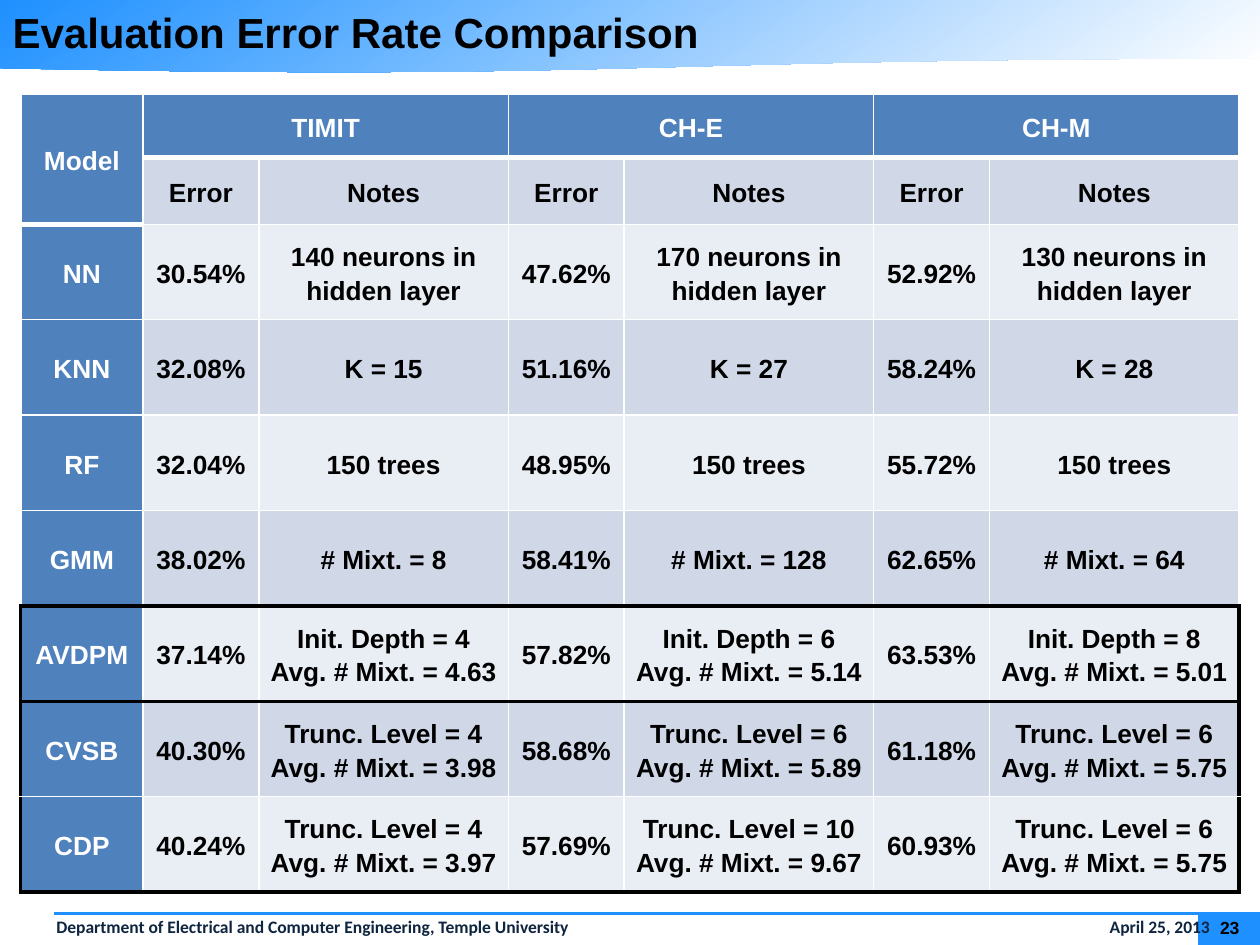
from lxml import etree
from pptx import Presentation
from pptx.dml.color import RGBColor
from pptx.enum.shapes import MSO_CONNECTOR, MSO_SHAPE
from pptx.enum.text import MSO_ANCHOR, PP_ALIGN
from pptx.oxml.ns import qn
from pptx.util import Inches, Pt

LEFT, CENTER, RIGHT = PP_ALIGN.LEFT, PP_ALIGN.CENTER, PP_ALIGN.RIGHT
TOP, MIDDLE = MSO_ANCHOR.TOP, MSO_ANCHOR.MIDDLE
TITLE_ONLY = 5

COLORS = {
    "black": "000000", "white": "FFFFFF", "accent": "1E90FF", "footer": "0F243E",
    "header": "4F81BD", "dark_band": "D0D8E8", "light_band": "E9EDF4",
}
TITLE = "Evaluation Error Rate Comparison"
DEPARTMENT = "Department of Electrical and Computer Engineering, Temple University"
DATE = "April 25, 2013"
SLIDE_NUMBER = "23"
CORPORA = ["TIMIT", "CH-E", "CH-M"]
ROWS = [
    ["Model", "TIMIT", "", "CH-E", "", "CH-M", ""],
    [""] + ["Error", "Notes"] * len(CORPORA),
    ["NN", "30.54%", "140 neurons in hidden layer", "47.62%", "170 neurons in hidden layer",
     "52.92%", "130 neurons in hidden layer"],
    ["KNN", "32.08%", "K = 15", "51.16%", "K = 27", "58.24%", "K = 28"],
    ["RF", "32.04%", "150 trees", "48.95%", "150 trees", "55.72%", "150 trees"],
    ["GMM", "38.02%", "# Mixt. = 8", "58.41%", "# Mixt. = 128", "62.65%", "# Mixt. = 64"],
    ["AVDPM", "37.14%", "Init. Depth = 4\vAvg. # Mixt. = 4.63",
     "57.82%", "Init. Depth = 6\nAvg. # Mixt. = 5.14",
     "63.53%", "Init. Depth = 8\nAvg. # Mixt. = 5.01"],
    ["CVSB", "40.30%", "Trunc. Level = 4\vAvg. # Mixt. = 3.98",
     "58.68%", "Trunc. Level = 6\nAvg. # Mixt. = 5.89",
     "61.18%", "Trunc. Level = 6\nAvg. # Mixt. = 5.75"],
    ["CDP", "40.24%", "Trunc. Level = 4\vAvg. # Mixt. = 3.97",
     "57.69%", "Trunc. Level = 10\nAvg. # Mixt. = 9.67",
     "60.93%", "Trunc. Level = 6\nAvg. # Mixt. = 5.75"],
]
TABLE_HEIGHT = 6.33
HEADING_HEIGHTS = [0.5, 0.53]
MODEL_COUNT = len(ROWS) - len(HEADING_HEIGHTS)
MODEL_HEIGHT = (TABLE_HEIGHT - sum(HEADING_HEIGHTS)) / MODEL_COUNT
ROW_HEIGHTS = HEADING_HEIGHTS + [MODEL_HEIGHT] * MODEL_COUNT
COLUMN_WIDTHS = [0.97] + [0.92, 1.98] * len(CORPORA)
FIRST_BOXED_ROW = 6
LAST_ROW, LAST_COLUMN = len(ROWS) - 1, len(COLUMN_WIDTHS) - 1


def rgb(name):
    return RGBColor.from_string(COLORS[name])


def style_text(text_frame, size, color, font="Arial", align=LEFT, spacing=None):
    for paragraph in text_frame.paragraphs:
        paragraph.alignment = align
        paragraph.line_spacing = spacing
        for run in paragraph.runs:
            run.font.size = Pt(size)
            run.font.name = font
            run.font.bold = True
            run.font.color.rgb = rgb(color)


def add_block(slide, preset, box):
    shape = slide.shapes.add_shape(preset, *map(Inches, box))
    shape.shadow.inherit = False
    shape.line.fill.background()
    return shape


def set_margins(target, horizontal, vertical):
    target.margin_left = target.margin_right = Inches(horizontal)
    target.margin_top = target.margin_bottom = Inches(vertical)


def add_text(slide, box, text, margins):
    text_frame = slide.shapes.add_textbox(*map(Inches, box)).text_frame
    text_frame.word_wrap = True
    set_margins(text_frame, *margins)
    text_frame.text = text
    return text_frame


def add_banner(slide):
    banner = add_block(slide, MSO_SHAPE.FLOWCHART_DOCUMENT, (0, 0, 10.01, 0.58))
    banner.fill.gradient()
    banner.fill.gradient_angle = 305
    for stop, color in zip(banner.fill.gradient_stops, ("accent", "white")):
        stop.color.rgb = rgb(color)
    slide.shapes.title._element.addprevious(banner._element)


def add_footer(slide):
    number_block = add_block(slide, MSO_SHAPE.RECTANGLE, (9.51, 7.24, 0.5, 0.26))
    number_block.fill.solid()
    number_block.fill.fore_color.rgb = rgb("accent")

    for left, width, text, align in ((0.35, 6, DEPARTMENT, LEFT), (7.7, 2, DATE, RIGHT)):
        footer = add_text(slide, (left, 7.23, width, 0.26), text, (0.1, 0.05))
        style_text(footer, 10, "footer", "Calibri", align, 0.95)

    rule = slide.shapes.add_connector(
        MSO_CONNECTOR.STRAIGHT, Inches(0.43), Inches(7.25), Inches(10), Inches(7.25))
    rule.line.color.rgb = rgb("accent")
    rule.line.width = Pt(1.5)
    etree.SubElement(rule._element.spPr, qn("a:effectLst"))

    number = add_text(slide, (9.56, 7.28, 0.4, 0.17), SLIDE_NUMBER, (0, 0))
    number.vertical_anchor = MIDDLE
    style_text(number, 10, "black", align=CENTER)


def add_title(slide):
    title = slide.shapes.title
    title.left, title.top, title.width, title.height = map(Inches, (0, 0, 10, 0.43))
    title.text_frame.text = TITLE
    title.text_frame.vertical_anchor = TOP
    style_text(title.text_frame, 24, "black")


def cell_borders(row, column):
    thin, thick, box = ("white", 1), ("white", 3), ("black", 2.25)
    boxed = row >= FIRST_BOXED_ROW
    heading_bottom = row == 0 or (row == 1 and column == 0)
    return {
        "a:lnL": box if boxed and column == 0 else thin,
        "a:lnR": box if boxed and column == LAST_COLUMN else thin,
        "a:lnT": box if row in (FIRST_BOXED_ROW, FIRST_BOXED_ROW + 1) else thin,
        "a:lnB": box if row in (FIRST_BOXED_ROW - 1, FIRST_BOXED_ROW, LAST_ROW)
        else thick if heading_bottom else thin,
    }


def draw_borders(cell, borders):
    properties = cell._tc.get_or_add_tcPr()
    for position, (tag, (color, width)) in enumerate(borders.items()):
        line = etree.Element(qn(tag), w=str(Pt(width)))
        fill = etree.SubElement(line, qn("a:solidFill"))
        etree.SubElement(fill, qn("a:srgbClr"), val=COLORS[color])
        properties.insert(position, line)


def add_results_table(slide):
    table = slide.shapes.add_table(
        len(ROWS), len(COLUMN_WIDTHS), Inches(0.165), Inches(0.75),
        Inches(sum(COLUMN_WIDTHS)), Inches(TABLE_HEIGHT)).table
    for column, width in zip(table.columns, COLUMN_WIDTHS):
        column.width = Inches(width)
    for row, height in zip(table.rows, ROW_HEIGHTS):
        row.height = Inches(height)
    for row, texts in enumerate(ROWS):
        band = "dark_band" if row % 2 else "light_band"
        for column, text in enumerate(texts):
            cell = table.cell(row, column)
            heading = row == 0 or column == 0
            cell.fill.solid()
            cell.fill.fore_color.rgb = rgb("header" if heading else band)
            cell.vertical_anchor = MIDDLE
            set_margins(cell, 0.07, 0)
            cell.text_frame.text = text
            style_text(cell.text_frame, 15, "white" if heading else "black",
                       align=CENTER, spacing=1.15)
            draw_borders(cell, cell_borders(row, column))
    table.cell(0, 0).merge(table.cell(1, 0))
    for index in range(len(CORPORA)):
        column = 1 + 2 * index
        table.cell(0, column).merge(table.cell(0, column + 1))


def main():
    presentation = Presentation()
    presentation.slide_width, presentation.slide_height = Inches(10), Inches(7.5)
    slide = presentation.slides.add_slide(presentation.slide_layouts[TITLE_ONLY])
    add_banner(slide)
    add_footer(slide)
    add_title(slide)
    add_results_table(slide)
    presentation.save("out.pptx")


if __name__ == "__main__":
    main()
